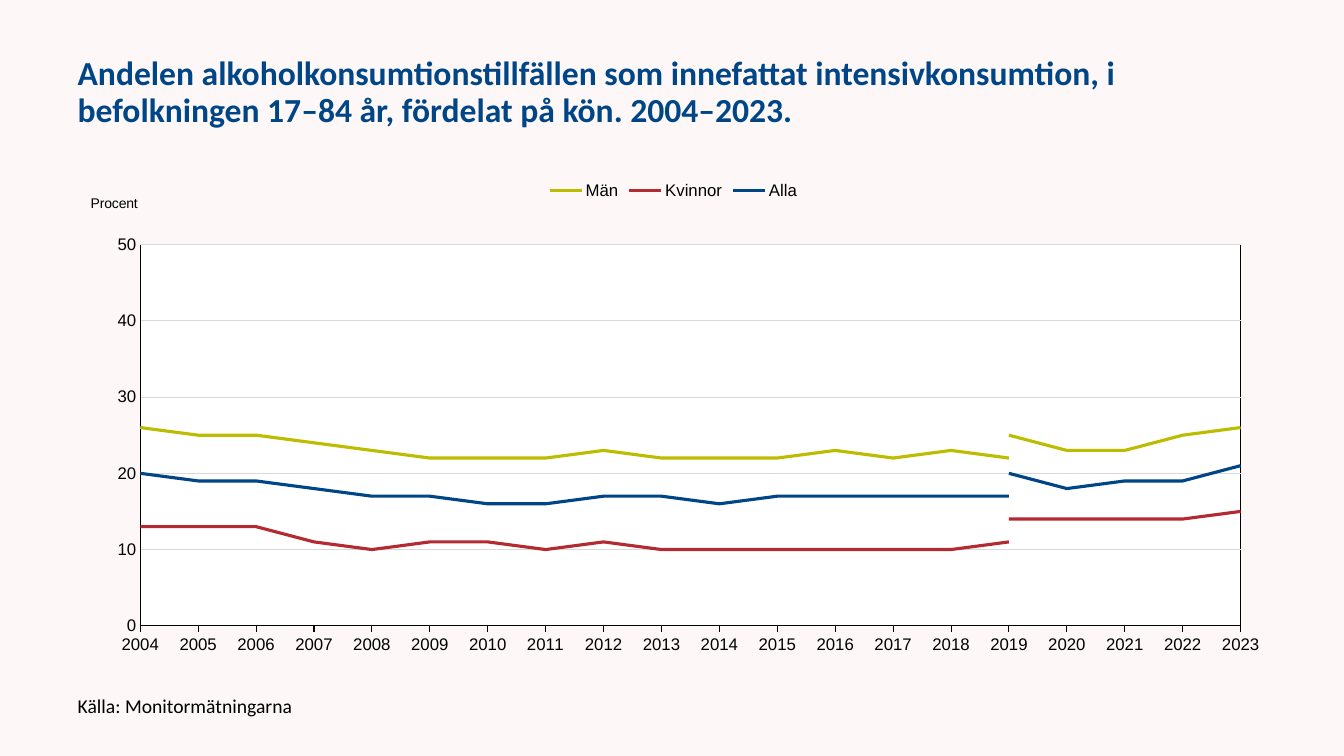
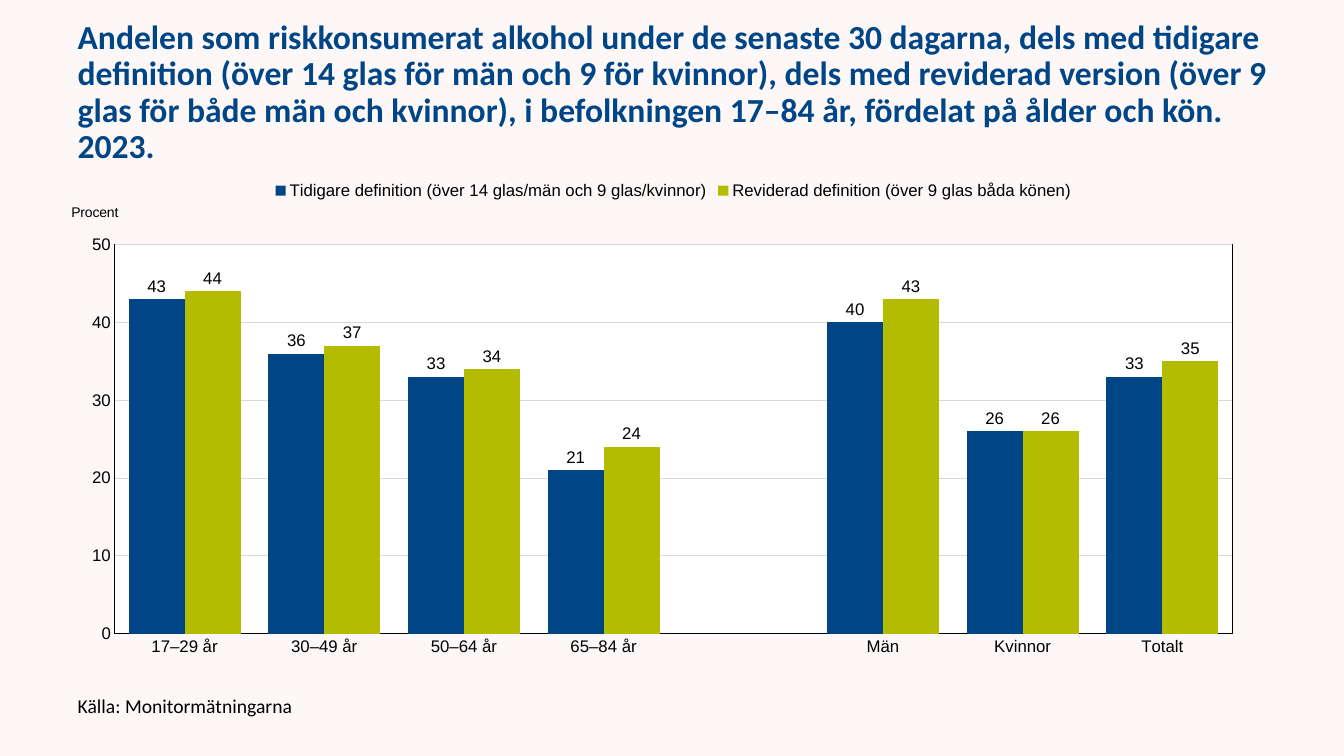
from dataclasses import dataclass

from pptx import Presentation
from pptx.chart.data import CategoryChartData
from pptx.dml.color import RGBColor
from pptx.enum.chart import XL_CHART_TYPE as ChartType
from pptx.enum.chart import XL_LABEL_POSITION as LabelPosition
from pptx.enum.chart import XL_LEGEND_POSITION as LegendPosition
from pptx.enum.chart import XL_TICK_MARK as TickMark
from pptx.enum.text import MSO_ANCHOR as Anchor
from pptx.enum.text import MSO_AUTO_SIZE as AutoSize
from pptx.enum.text import PP_ALIGN as Align
from pptx.oxml import parse_xml
from pptx.oxml.ns import nsdecls, qn
from pptx.util import Inches, Pt


@dataclass(frozen=True)
class Theme:
    background: str = "FEF7F7"
    plot_fill: str = "FFFFFF"
    text: str = "000000"
    grid: str = "D9D9D9"
    blue: str = "004687"
    red: str = "B32B31"
    olive: str = "BEBC00"
    lime: str = "B3BC00"
    text_font: str = "Calibri"
    chart_font: str = "Arial"
    title_size: int = 24
    source_size: int = 14
    chart_size: int = 12
    unit_size: int = 10
    thin_line: float = 0.75
    series_line: float = 2.25


THEME = Theme()

# Frames shared by both slides: left, top, width, height in inches
TITLE_FRAME = (0.67, 0.3, 12, 1.25)
SOURCE_FRAME = (0.67, 6.83, 6, 0.37)
CHART_FRAME = (0.67, 1.69, 12.02, 4.95)
SOURCE = "Källa: Monitormätningarna"

# Line chart: the method changed in 2019, so that year has two values
YEARS = range(2004, 2024)
BREAK_YEAR = 2019
TREND_TITLE = (
    "Andelen alkoholkonsumtionstillfällen som innefattat intensivkonsumtion, "
    "i befolkningen 17–84 år, fördelat på kön. 2004–2023."
)
TRENDS = [
    ("Män", THEME.olive,
     (26, 25, 25, 24, 23, 22, 22, 22, 23, 22, 22, 22, 23, 22, 23, 22),
     (25, 23, 23, 25, 26)),
    ("Kvinnor", THEME.red,
     (13, 13, 13, 11, 10, 11, 11, 10, 11, 10, 10, 10, 10, 10, 10, 11),
     (14, 14, 14, 14, 15)),
    ("Alla", THEME.blue,
     (20, 19, 19, 18, 17, 17, 16, 16, 17, 17, 16, 17, 17, 17, 17, 17),
     (20, 18, 19, 19, 21)),
]

# Column chart: the unnamed group separates ages from sexes
RISK_TITLE = (
    "Andelen som riskkonsumerat alkohol under de senaste 30 dagarna, dels med "
    "tidigare definition (över 14 glas för män och 9 för kvinnor), dels med "
    "reviderad version (över 9 glas för både män och kvinnor), i befolkningen "
    "17–84 år, fördelat på ålder och kön. 2023."
)
RISK_GROUPS = ["17–29 år", "30–49 år", "50–64 år", "65–84 år", "",
               "Män", "Kvinnor", "Totalt"]
DEFINITIONS = [
    ("Tidigare definition (över 14 glas/män och 9 glas/kvinnor)", THEME.blue,
     (43, 36, 33, 21, None, 40, 26, 33)),
    ("Reviderad definition (över 9 glas båda könen)", THEME.lime,
     (44, 37, 34, 24, None, 43, 26, 35)),
]


# Text
def style_font(font, size, face, color=THEME.text, bold=False):
    font.size = Pt(size)
    font.name = face
    font.bold = bold
    font.color.rgb = RGBColor.from_string(color)


def write_text(frame, text, spacing=1.0, align=Align.LEFT, **font_format):
    frame.text = text
    paragraph = frame.paragraphs[0]
    paragraph.alignment = align
    paragraph.line_spacing = spacing
    paragraph.space_before = Pt(0)
    style_font(paragraph.runs[0].font, **font_format)
    return paragraph


def fill_placeholder(placeholder, position, text, **text_format):
    (placeholder.left, placeholder.top,
     placeholder.width, placeholder.height) = map(Inches, position)
    frame = placeholder.text_frame
    frame.word_wrap = True
    frame.auto_size = AutoSize.NONE
    frame.vertical_anchor = Anchor.MIDDLE
    return write_text(frame, text, spacing=0.9, face=THEME.text_font, **text_format)


def add_slide(prs, title):
    slide = prs.slides.add_slide(prs.slide_layouts[1])
    fill_placeholder(slide.shapes.title, TITLE_FRAME, title,
                     size=THEME.title_size, color=THEME.blue, bold=True)
    source = fill_placeholder(slide.placeholders[1], SOURCE_FRAME, SOURCE,
                              size=THEME.source_size)
    properties = source._p.get_or_add_pPr()
    properties.set("marL", "0")
    properties.set("indent", "0")
    properties.append(parse_xml(f"<a:buNone {nsdecls('a')}/>"))
    return slide


# Chart parts
def set_layout(parent, index, x, y, size=None):
    values = [("xMode", "edge"), ("yMode", "edge"), ("x", x), ("y", y)]
    if size:
        values.insert(0, ("layoutTarget", "inner"))
        values += zip("wh", size)
    old = parent.find(qn("c:layout"))
    if old is not None:
        parent.remove(old)
    body = "".join(f'<c:{tag} val="{value}"/>' for tag, value in values)
    parent.insert(index, parse_xml(
        f"<c:layout {nsdecls('c')}><c:manualLayout>{body}"
        "</c:manualLayout></c:layout>"))


def style_line(line, color=THEME.text, width=THEME.thin_line):
    line.color.rgb = RGBColor.from_string(color)
    line.width = Pt(width)


def style_plot_area(chart, plot_box):
    area = chart._chartSpace.find(f".//{qn('c:plotArea')}")
    set_layout(area, 0, *plot_box[:2], size=plot_box[2:])
    area.append(parse_xml(
        f"<c:spPr {nsdecls('c', 'a')}>"
        f'<a:solidFill><a:srgbClr val="{THEME.plot_fill}"/></a:solidFill>'
        f'<a:ln w="{Pt(THEME.thin_line)}"><a:solidFill>'
        f'<a:srgbClr val="{THEME.text}"/></a:solidFill></a:ln></c:spPr>'))


def set_crossing(value_axis, crossing):
    axis = value_axis._element
    old = axis.find(qn("c:crossBetween"))
    if old is not None:
        axis.remove(old)
    axis.find(qn("c:majorUnit")).addprevious(
        parse_xml(f'<c:crossBetween {nsdecls("c")} val="{crossing}"/>'))


def style_axes(chart, category_tick, crossing, unit_position):
    categories, percent = chart.category_axis, chart.value_axis
    for axis, tick in ((categories, category_tick), (percent, TickMark.NONE)):
        axis.major_tick_mark = tick
        axis.minor_tick_mark = TickMark.NONE
        style_line(axis.format.line)
    categories.has_major_gridlines = False
    percent.minimum_scale, percent.maximum_scale = 0, 50
    percent.major_unit = 10
    set_crossing(percent, crossing)
    percent.has_major_gridlines = True
    style_line(percent.major_gridlines.format.line, THEME.grid)
    percent.tick_labels.number_format = "0"
    percent.tick_labels.number_format_is_linked = False

    unit = percent.axis_title
    write_text(unit.text_frame, "Procent", size=THEME.unit_size,
               face=THEME.chart_font)
    unit._element.find(f".//{qn('a:bodyPr')}").set("rot", "0")
    set_layout(unit._element, 1, *unit_position)


def hide_legend_entries(chart, indexes):
    position = chart.legend._element.find(qn("c:legendPos"))
    for index in reversed(indexes):
        position.addnext(parse_xml(
            f'<c:legendEntry {nsdecls("c")}><c:idx val="{index}"/>'
            '<c:delete val="1"/></c:legendEntry>'))


def add_chart(slide, kind, categories, series, plot_box, unit_position,
              category_tick=TickMark.NONE, crossing="between"):
    data = CategoryChartData(number_format="0")
    data.categories = categories
    for name, values in series:
        data.add_series(name, values)
    chart = slide.shapes.add_chart(kind, *map(Inches, CHART_FRAME), data).chart
    chart.has_title = False
    style_font(chart.font, THEME.chart_size, THEME.chart_font)
    chart.has_legend = True
    chart.legend.position = LegendPosition.TOP
    chart.legend.include_in_layout = False
    style_font(chart.legend.font, THEME.chart_size, THEME.chart_font)
    chart.plots[0].vary_by_categories = False
    style_axes(chart, category_tick, crossing, unit_position)
    style_plot_area(chart, plot_box)
    return chart


# Slides
def add_trend_slide(prs):
    slide = add_slide(prs, TREND_TITLE)
    before = BREAK_YEAR - YEARS[0]
    after = YEARS[-1] - BREAK_YEAR
    series, colors = [], []
    for name, color, earlier, later in TRENDS:
        series += [(name, earlier + (None,) * after),
                   (name, (None,) * before + later)]
        colors += [color, color]
    chart = add_chart(slide, ChartType.LINE, [str(year) for year in YEARS], series,
                      plot_box=(0.06, 0.149, 0.908, 0.764),
                      unit_position=(0.017, 0.042),
                      category_tick=TickMark.OUTSIDE, crossing="midCat")
    for trend, color in zip(chart.plots[0].series, colors):
        trend.smooth = False
        style_line(trend.format.line, color, THEME.series_line)
    hide_legend_entries(chart, range(1, len(series), 2))


def add_risk_slide(prs):
    slide = add_slide(prs, RISK_TITLE)
    chart = add_chart(slide, ChartType.COLUMN_CLUSTERED, RISK_GROUPS,
                      [(name, values) for name, _, values in DEFINITIONS],
                      plot_box=(0.039, 0.149, 0.922, 0.78),
                      unit_position=(0.001, 0.06))
    plot = chart.plots[0]
    plot.gap_width, plot.overlap = 50, 0
    for columns, (_, color, _) in zip(plot.series, DEFINITIONS):
        columns.format.fill.solid()
        columns.format.fill.fore_color.rgb = RGBColor.from_string(color)
        labels = columns.data_labels
        labels.show_value = True
        labels.number_format = "0"
        labels.number_format_is_linked = False
        labels.position = LabelPosition.OUTSIDE_END
        style_font(labels.font, THEME.chart_size, THEME.chart_font)


def main():
    prs = Presentation()
    prs.slide_width, prs.slide_height = Inches(13.33), Inches(7.5)
    background = prs.slide_master.background.fill
    background.solid()
    background.fore_color.rgb = RGBColor.from_string(THEME.background)
    add_trend_slide(prs)
    add_risk_slide(prs)
    prs.save("out.pptx")


if __name__ == "__main__":
    main()
